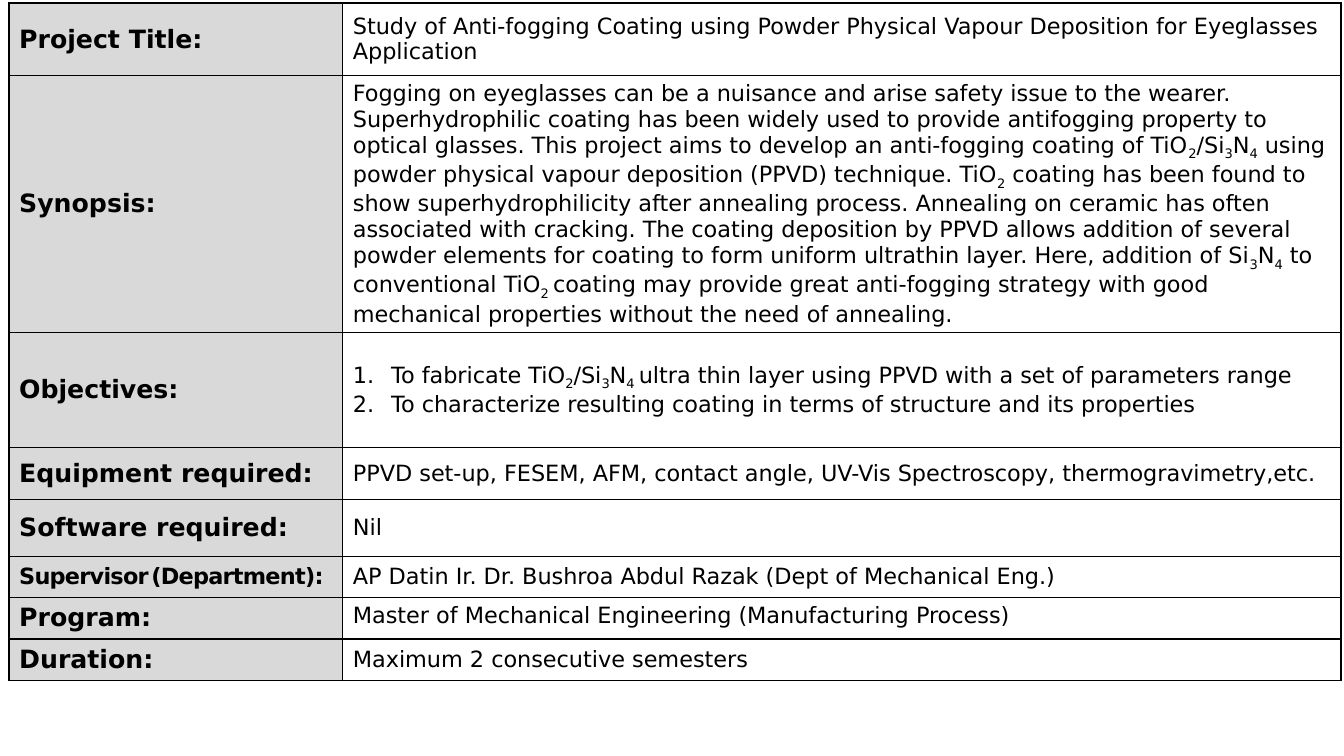
from lxml.etree import SubElement as Sub
from pptx import Presentation
from pptx.dml.color import RGBColor as RGB
from pptx.enum.text import MSO_ANCHOR as Anchor
from pptx.oxml.ns import qn
from pptx.util import Inches, Pt

# Content: label, value, row height; _x_ marks a subscript, a list is numbered
ROWS = [
    ("Project Title:",
     "Study of Anti-fogging Coating using Powder Physical Vapour Deposition "
     "for Eyeglasses Application", 0.72),
    ("Synopsis:",
     "Fogging on eyeglasses can be a nuisance and arise safety issue to the "
     "wearer. Superhydrophilic coating has been widely used to provide "
     "antifogging property to optical glasses. This project aims to develop an "
     "anti-fogging coating of TiO_2_/Si_3_N_4_ using powder physical vapour "
     "deposition (PPVD) technique. TiO_2_ coating has been found to show "
     "superhydrophilicity after annealing process. Annealing on ceramic has "
     "often associated with cracking. The coating deposition by PPVD allows "
     "addition of several powder elements for coating to form uniform ultrathin "
     "layer. Here, addition of Si_3_N_4_ to conventional TiO_2 _coating may "
     "provide great anti-fogging strategy with good mechanical properties "
     "without the need of annealing.", 2.55),
    ("Objectives:",
     ["To fabricate TiO_2_/Si_3_N_4 _ultra thin layer using PPVD with a set of "
      "parameters range",
      "To characterize resulting coating in terms of structure and its "
      "properties"], 1.14),
    ("Equipment required:",
     "PPVD set-up, FESEM, AFM, contact angle, UV-Vis Spectroscopy, "
     "thermogravimetry,etc.", 0.52),
    ("Software required:", "Nil", 0.56),
    ("Supervisor (Department):",
     "AP Datin Ir. Dr. Bushroa Abdul Razak (Dept of Mechanical Eng.)", 0.41),
    ("Program:", "Master of Mechanical Engineering (Manufacturing Process)", 0.41),
    ("Duration:", "Maximum 2 consecutive semesters", 0.41),
]
COLS = [3.31, 9.9]
LEFT, TOP = 0.09, 0.03
FONT, INK, GREY = "DejaVu Sans", "000000", "D9D9D9"
TIGHT, TOP_ROW = "Supervisor (Department):", "Program:"


def color(code):
    return RGB.from_string(code)


def put(para, text, size=16, bold=False, space=0):
    """Add text to a paragraph, with every second _ part as a subscript."""
    for i, part in enumerate(text.split("_")):
        if not part:
            continue
        run = para.add_run()
        run.text = part
        font = run.font
        font.name, font.size, font.bold = FONT, Pt(size), bold
        font.color.rgb = color(INK)
        props = run._r.get_or_add_rPr()
        if i % 2:
            props.set("baseline", "-25000")
        if space:
            props.set("spc", str(int(space * 100)))


def number(para):
    props = para._p.get_or_add_pPr()
    props.set("marL", str(Inches(0.38)))
    props.set("indent", str(-Inches(0.38)))
    Sub(props, qn("a:buFont"), typeface="+mj-lt")
    Sub(props, qn("a:buAutoNum"), type="arabicPeriod")


def frame(cell, fill=None):
    """Draw the four borders, then the fill."""
    props = cell._tc.get_or_add_tcPr()
    for side in "LRTB":
        line = Sub(props, qn("a:ln" + side), w=str(Pt(1)))
        Sub(Sub(line, qn("a:solidFill")), qn("a:srgbClr"), val=INK)
    if fill:
        cell.fill.solid()
        cell.fill.fore_color.rgb = color(fill)
    else:
        cell.fill.background()
    cell.vertical_anchor = Anchor.MIDDLE


# Slide
deck = Presentation()
deck.slide_width, deck.slide_height = Inches(13.33), Inches(7.5)
slide = deck.slides.add_slide(deck.slide_layouts[6])

# Table
high = sum(row[2] for row in ROWS)
table = slide.shapes.add_table(len(ROWS), len(COLS), Inches(LEFT), Inches(TOP),
                               Inches(sum(COLS)), Inches(high)).table
table.first_row = table.horz_banding = False
for col, wide in zip(table.columns, COLS):
    col.width = Inches(wide)

for r, (label, value, tall) in enumerate(ROWS):
    table.rows[r].height = Inches(tall)
    head, body = table.cell(r, 0), table.cell(r, 1)
    frame(head, GREY)
    frame(body)

    # Label
    para = head.text_frame.paragraphs[0]
    if label == TIGHT:
        head.margin_right = 0
        first, last = label.split(" ")
        for text, size in [(first, 16), (" ", 5), (last, 16)]:
            put(para, text, size=size, bold=True, space=-0.5)
    else:
        put(para, label, size=18, bold=True)

    # Value
    if label == TOP_ROW:
        body.vertical_anchor = Anchor.TOP
    listed = isinstance(value, list)
    for i, text in enumerate(value if listed else [value]):
        box = body.text_frame
        para = box.add_paragraph() if i else box.paragraphs[0]
        if listed:
            number(para)
        put(para, text)

deck.save("out.pptx")
